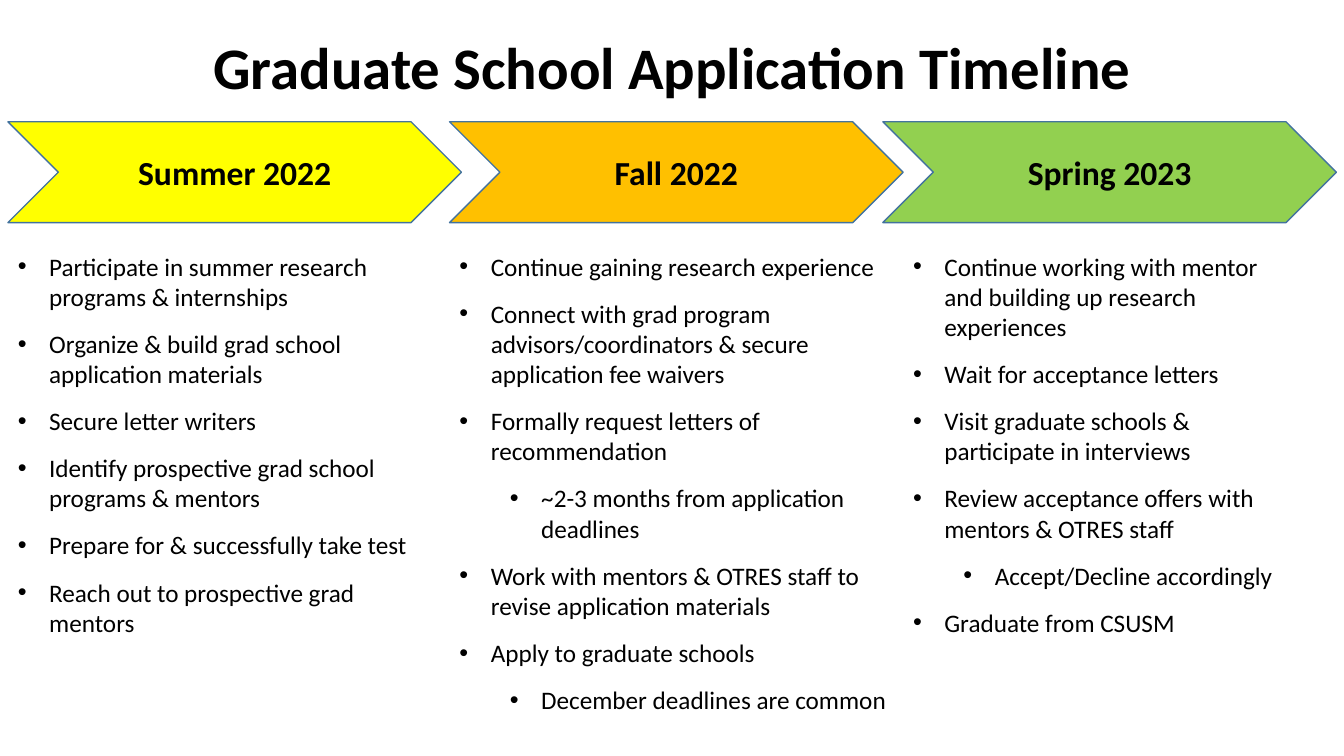
from dataclasses import dataclass

from lxml.etree import SubElement
from pptx import Presentation
from pptx.dml.color import RGBColor
from pptx.enum.shapes import MSO_SHAPE
from pptx.enum.text import MSO_ANCHOR, MSO_AUTO_SIZE, PP_ALIGN
from pptx.oxml.ns import qn
from pptx.util import Cm, Pt


@dataclass(frozen=True)
class Theme:
    """Colours, font and type sizes of the slide."""

    font: str = "Calibri"
    text: str = "000000"
    outline: str = "43739E"
    summer: str = "FFFF00"
    fall: str = "FFC000"
    spring: str = "92D050"
    title_size: int = 42
    season_size: int = 24
    task_size: int = 18


@dataclass(frozen=True)
class Season:
    """One stage of the timeline; lengths are in centimetres."""

    name: str
    colour: str
    left: float
    tasks_left: float
    tasks_width: float
    tasks_height: float
    tasks: tuple


THEME = Theme()

SEASONS = (
    Season("Summer 2022", THEME.summer, 0.2, 0.2, 10.54, 10.08, (
        (0, "Participate in summer research programs & internships"),
        (0, "Organize & build grad school application materials"),
        (0, "Secure letter writers"),
        (0, "Identify prospective grad school programs & mentors"),
        (0, "Prepare for & successfully take test"),
        (0, "Reach out to prospective grad mentors"),
    )),
    Season("Fall 2022", THEME.fall, 11.33, 11.33, 11.43, 12.07, (
        (0, "Continue gaining research experience"),
        (0, "Connect with grad program advisors/coordinators & secure application fee waivers"),
        (0, "Formally request letters of recommendation"),
        (1, "~2-3 months from application deadlines"),
        (0, "Work with mentors & OTRES staff to revise application materials"),
        (0, "Apply to graduate schools"),
        (1, "December deadlines are common"),
    )),
    Season("Spring 2023", THEME.spring, 22.25, 22.76, 9.93, 10.08, (
        (0, "Continue working with mentor and building up research experiences"),
        (0, "Wait for acceptance letters"),
        (0, "Visit graduate schools & participate in interviews"),
        (0, "Review acceptance offers with mentors & OTRES staff"),
        (1, "Accept/Decline accordingly"),
        (0, "Graduate from CSUSM"),
    )),
)


def style_paragraph(paragraph, size, bold=False):
    """Give every run of a paragraph the theme font."""
    for run in paragraph.runs:
        run.font.name = THEME.font
        run.font.size = Pt(size)
        run.font.bold = bold
        run.font.color.rgb = RGBColor.from_string(THEME.text)


def set_heading(text_frame, text, size):
    """Write one bold, centred line."""
    text_frame.text = text
    paragraph = text_frame.paragraphs[0]
    paragraph.alignment = PP_ALIGN.CENTER
    style_paragraph(paragraph, size, bold=True)


def add_text_box(slide, left, top, width, height):
    """Add a wrapping text box and return its text frame."""
    shape = slide.shapes.add_textbox(Cm(left), Cm(top), Cm(width), Cm(height))
    text_frame = shape.text_frame
    text_frame.word_wrap = True
    text_frame.auto_size = MSO_AUTO_SIZE.SHAPE_TO_FIT_TEXT
    return text_frame


def add_season_arrow(slide, season):
    """Add the chevron that names a season."""
    shape = slide.shapes.add_shape(
        MSO_SHAPE.CHEVRON, Cm(season.left), Cm(3.07), Cm(11.43), Cm(2.54))
    shape.shadow.inherit = False
    shape.fill.solid()
    shape.fill.fore_color.rgb = RGBColor.from_string(season.colour)
    shape.line.color.rgb = RGBColor.from_string(THEME.outline)
    shape.line.width = Pt(1)
    shape.text_frame.vertical_anchor = MSO_ANCHOR.MIDDLE
    set_heading(shape.text_frame, season.name, THEME.season_size)


def add_bullet(paragraph, level):
    """Set a hanging bullet for the given outline level."""
    paragraph.level = level
    properties = paragraph._p.get_or_add_pPr()
    properties.set("marL", str(Cm(0.79 + 1.27 * level)))
    properties.set("indent", str(-Cm(0.79)))
    SubElement(properties, qn("a:buFont"), typeface="Arial")
    SubElement(properties, qn("a:buChar"), char="•")


def add_task_list(slide, season):
    """Add the bulleted tasks below a season."""
    text_frame = add_text_box(
        slide, season.tasks_left, 6.2, season.tasks_width, season.tasks_height)
    for index, (level, task) in enumerate(season.tasks):
        paragraph = text_frame.add_paragraph() if index else text_frame.paragraphs[0]
        paragraph.text = task
        add_bullet(paragraph, level)
        paragraph.space_after = Pt(12)
        style_paragraph(paragraph, THEME.task_size)


def main():
    """Build the timeline slide and save it."""
    presentation = Presentation()
    presentation.slide_width = Cm(33.87)
    presentation.slide_height = Cm(19.05)
    slide = presentation.slides.add_slide(presentation.slide_layouts[6])
    title = add_text_box(slide, 3.81, 0.64, 26.26, 2.06)
    set_heading(title, "Graduate School Application Timeline", THEME.title_size)
    for season in SEASONS:
        add_season_arrow(slide, season)
        add_task_list(slide, season)
    presentation.save("out.pptx")


if __name__ == "__main__":
    main()
